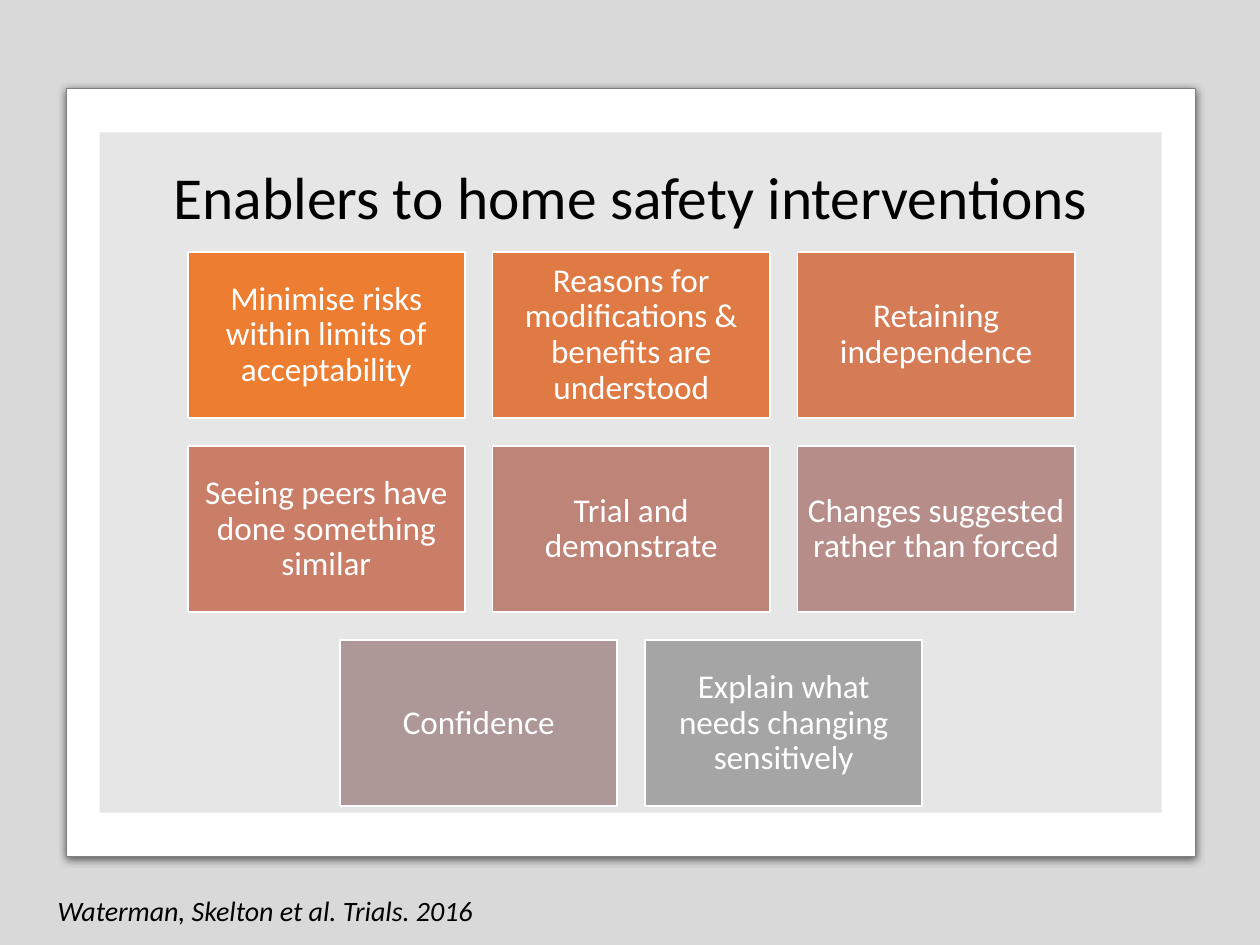
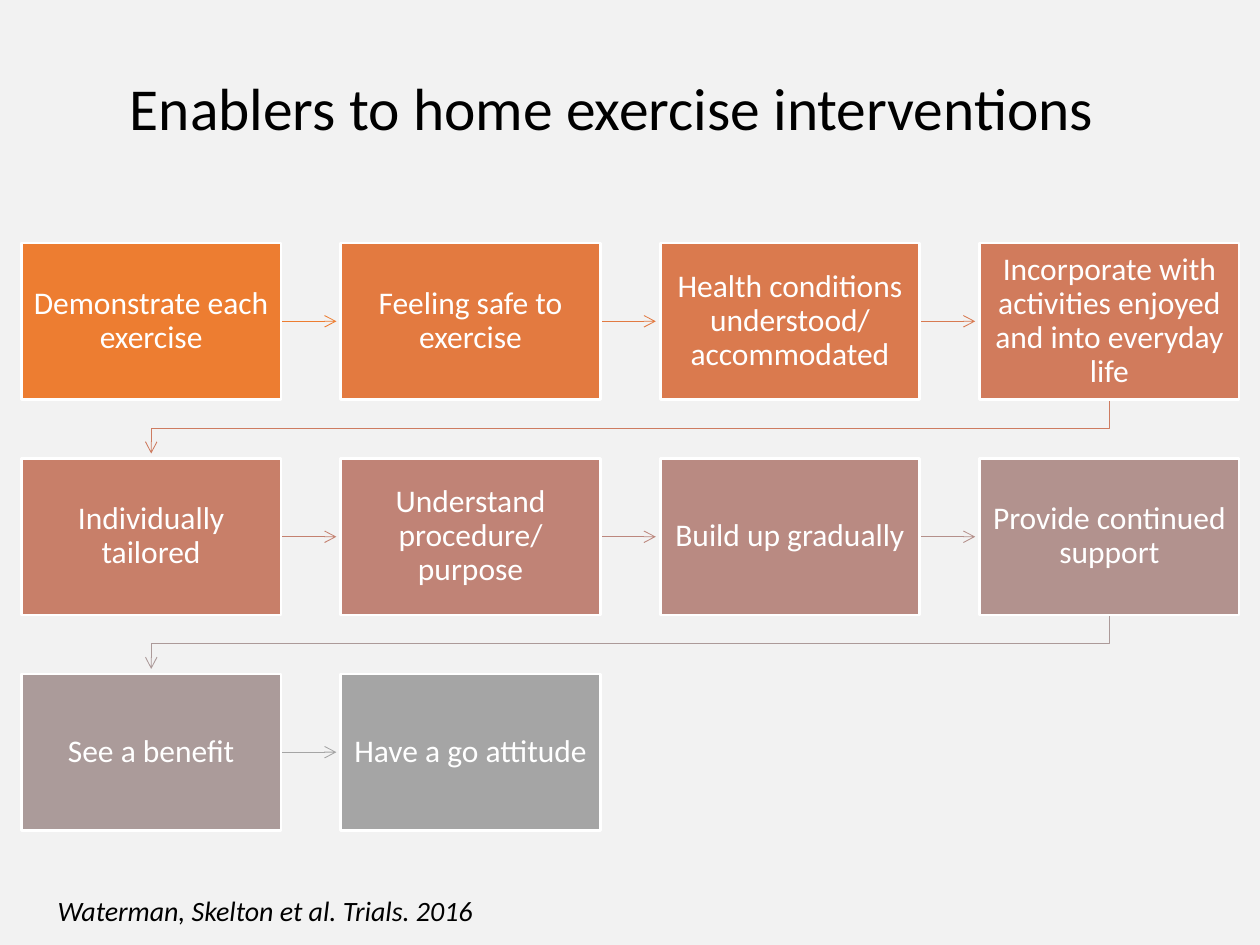
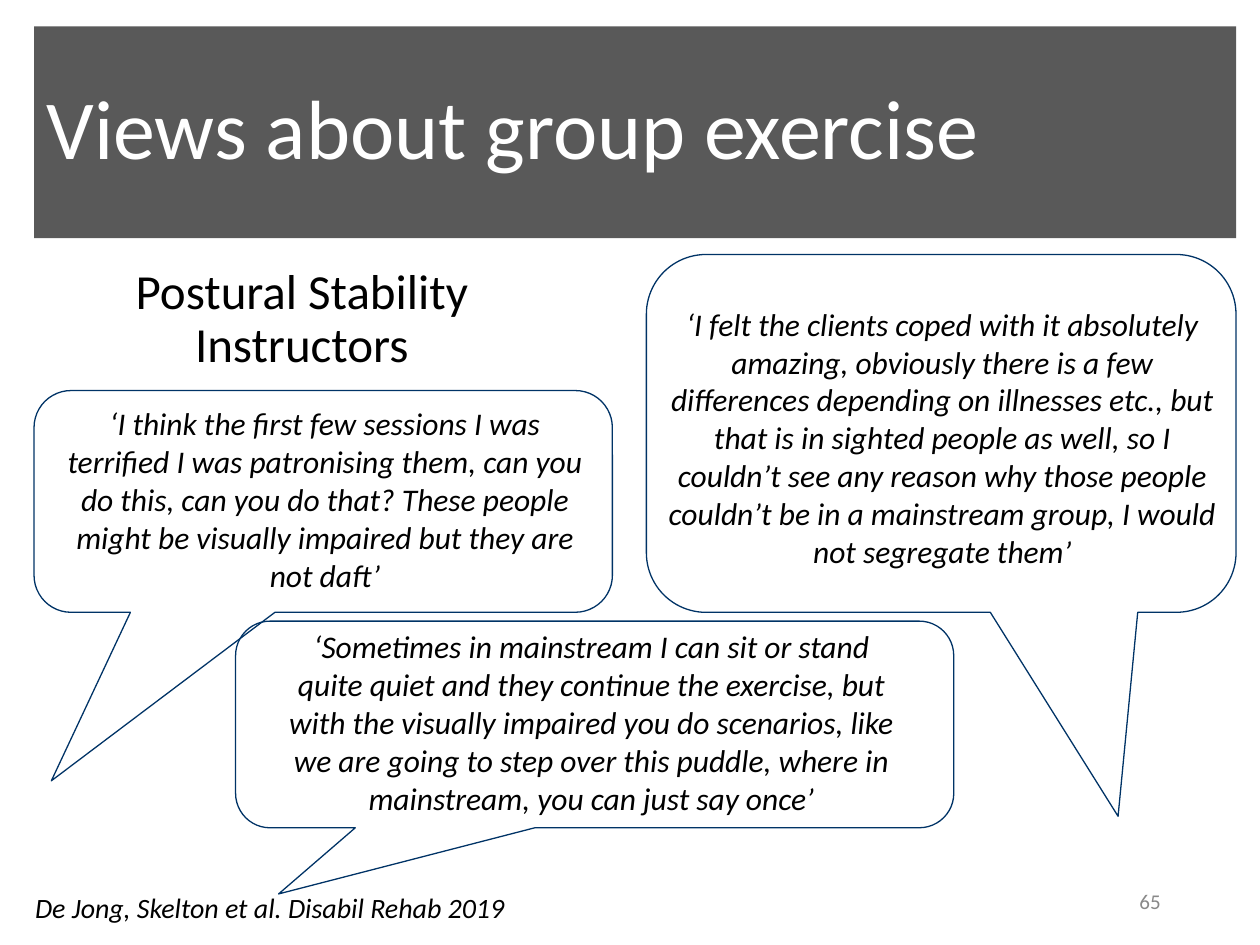
from lxml import etree
from pptx import Presentation
from pptx.dml.color import RGBColor
from pptx.enum.shapes import MSO_CONNECTOR, MSO_SHAPE
from pptx.enum.text import MSO_ANCHOR, PP_ALIGN
from pptx.oxml.ns import qn
from pptx.util import Inches, Pt

RECT, CALLOUT = MSO_SHAPE.RECTANGLE, MSO_SHAPE.ROUNDED_RECTANGULAR_CALLOUT
STRAIGHT = MSO_CONNECTOR.STRAIGHT
LEFT, CENTER, RIGHT = PP_ALIGN.LEFT, PP_ALIGN.CENTER, PP_ALIGN.RIGHT
TOP, MIDDLE = MSO_ANCHOR.TOP, MSO_ANCHOR.MIDDLE

FONT = "Calibri"
COLORS = {
    "text": "000000", "white": "FFFFFF", "overlay": "000000",
    "frame line": "808080", "panel": "E7E6E6", "pale": "F2F2F2",
    "band": "595959", "callout line": "003366", "number": "898989",
}

# Tile texts with their fills, and the colour of the arrow that leaves each tile
SAFETY_ENABLERS = [
    ("Minimise risks within limits of acceptability", "ED7D31"),
    ("Reasons for modifications & benefits are understood", "E07A44"),
    ("Retaining independence", "D57B56"),
    ("Seeing peers have done something similar", "CA7E67"),
    ("Trial and demonstrate", "BF8478"),
    ("Changes suggested rather than forced", "B68D88"),
    ("Confidence", "AD9897"),
    ("Explain what needs changing sensitively", "A5A5A5"),
]
EXERCISE_ENABLERS = [
    ("Demonstrate each exercise", "ED7D31", "ED7D31"),
    ("Feeling safe to exercise", "E37A40", "E27A42"),
    ("Health conditions understood/ accommodated", "DA7A4E", "D87A51"),
    ("Incorporate with activities enjoyed and into everyday life", "D17B5C", "CE7C61"),
    ("Individually tailored", "C87F69", "C48170"),
    ("Understand procedure/ purpose", "C08376", "BC877E"),
    ("Build up gradually", "B98A82", "B4908B"),
    ("Provide continued support", "B2928E", "AC9A99"),
    ("See a benefit", "AB9B9A", "A5A5A5"),
    ("Have a go attitude", "A5A5A5", None),
]
# Callout box, tail tip, then text box and quote
QUOTES = [
    ((0.27, 3.1, 4.59, 1.76), (-0.47, 1.26), (0.37, 3.16, 4.42, 1.62),
     "‘I think the first few sessions I was terrified I was patronising them, can you do "
     "this, can you do that? These people might be visually impaired but they are not daft’"),
    ((5.13, 2.02, 4.68, 2.84), (0.3, 1.07), (5.2, 2.37, 4.56, 2.22),
     "‘I felt the clients coped with it absolutely amazing, obviously there is a few "
     "differences depending on illnesses etc., but that is in sighted people as well, so I "
     "couldn’t see any reason why those people couldn’t be in a mainstream group, I would "
     "not segregate them’"),
    ((1.87, 4.93, 5.7, 1.64), (-0.44, 0.82), (2.14, 4.93, 5.11, 1.62),
     "‘Sometimes in mainstream I can sit or stand quite quiet and they continue the "
     "exercise, but with the visually impaired you do scenarios, like we are going to step "
     "over this puddle, where in mainstream, you can just say once’"),
]
# Title, box, size, colour, alignment, then source line and its box
SLIDES = [
    ("Enablers to home safety interventions", (1.05, 1.18, 7.91, 0.82), 34, "text", CENTER,
     "Waterman, Skelton et al. Trials. 2016", (0.36, 7.04, 7.4, 0.37)),
    ("Enablers to home exercise interventions", (0.9, 0.37, 7.91, 1.02), 34, "text", CENTER,
     "Waterman, Skelton et al. Trials. 2016", (0.36, 7.04, 7.4, 0.37)),
    ("Views about group exercise", (0.27, 0.21, 9.54, 1.68), 48, "white", LEFT,
     "De Jong, Skelton et al. Disabil Rehab 2019", (0.18, 7.02, 5.51, 0.37)),
]


def put_shape(slide, kind, box, fill, line=None, width=1):
    shape = slide.shapes.add_shape(kind, *map(Inches, box))
    shape.shadow.inherit = False
    if fill:
        shape.fill.solid()
        shape.fill.fore_color.rgb = RGBColor.from_string(fill)
    else:
        shape.fill.background()
    if line:
        shape.line.color.rgb = RGBColor.from_string(line)
        shape.line.width = Pt(width)
    else:
        shape.line.fill.background()
    return shape


def write(shape, text, size, color="text", align=LEFT, anchor=TOP,
          italic=False, spacing=None, insets=(0.1, 0.05)):
    frame = shape.text_frame
    frame.word_wrap = True
    frame.vertical_anchor = anchor
    frame.margin_left = frame.margin_right = Inches(insets[0])
    frame.margin_top = frame.margin_bottom = Inches(insets[1])
    paragraph = frame.paragraphs[0]
    paragraph.alignment = align
    paragraph.line_spacing = spacing
    run = paragraph.add_run()
    run.text = text
    run.font.name, run.font.size, run.font.italic = FONT, Pt(size), italic
    run.font.color.rgb = RGBColor.from_string(COLORS[color])


prs = Presentation()
prs.slide_width, prs.slide_height = Inches(10), Inches(7.5)

# Titles and source lines
for title, title_box, size, color, align, source, source_box in SLIDES:
    slide = prs.slides.add_slide(prs.slide_layouts[5])
    heading = slide.shapes.title
    heading.left, heading.top, heading.width, heading.height = map(Inches, title_box)
    write(heading, title, size, color, align, MIDDLE, spacing=0.9)
    write(slide.shapes.add_textbox(*map(Inches, source_box)), source, 16, italic=True)
safety, exercise, views = prs.slides

# Home safety: tinted page, framed card and inner panel behind the title
overlay = put_shape(safety, RECT, (0, 0, 10, 7.5), COLORS["overlay"])
tint = overlay._element.spPr.find(qn("a:solidFill"))[0]
etree.SubElement(tint, qn("a:alpha"), val="15000")
card = put_shape(safety, RECT, (0.53, 0.7, 8.96, 6.1), COLORS["white"],
                 COLORS["frame line"], 0.75)
shadow = etree.SubElement(card._element.spPr.find(qn("a:effectLst")), qn("a:outerShdw"),
                          blurRad=str(Pt(4.5)), dist=str(Pt(1.5)), dir="5400000",
                          algn="t", rotWithShape="0")
shadow_color = etree.SubElement(shadow, qn("a:srgbClr"), val="000000")
etree.SubElement(shadow_color, qn("a:alpha"), val="63000")
panel = put_shape(safety, RECT, (0.79, 1.05, 8.43, 5.4), COLORS["panel"])
for layer, backdrop in enumerate((overlay, card, panel)):
    safety.shapes._spTree.insert(2 + layer, backdrop._element)

# Home safety: three tiles a row, the short last row centred
for i, (enabler, fill) in enumerate(SAFETY_ENABLERS):
    row, column = divmod(i, 3)
    tiles_in_row = min(3, len(SAFETY_ENABLERS) - 3 * row)
    left = 1.49 + 2.42 * (column + (3 - tiles_in_row) / 2)
    tile = put_shape(safety, RECT, (left, 2 + 1.54 * row, 2.2, 1.32), fill, COLORS["white"])
    write(tile, enabler, 19, "white", CENTER, MIDDLE, spacing=0.9, insets=(0.08, 0.08))

# Home exercise: four tiles a row, each leading to the next
exercise.background.fill.solid()
exercise.background.fill.fore_color.rgb = RGBColor.from_string(COLORS["pale"])
TILE_W, TILE_H, STEP_X, STEP_Y = 2.06, 1.24, 2.535, 1.71
for i, (enabler, fill, arrow_color) in enumerate(EXERCISE_ENABLERS):
    row, column = divmod(i, 4)
    left, top = 0.17 + STEP_X * column, 1.93 + STEP_Y * row
    if arrow_color:
        if column < 3:
            start, middle = left + TILE_W, top + TILE_H / 2
            arrow = exercise.shapes.add_connector(
                STRAIGHT, *map(Inches, (start, middle, start + 0.44, middle)))
        else:
            start, end, bottom = left + TILE_W / 2, 0.17 + TILE_W / 2, top + TILE_H
            bend = [(end, bottom + 0.23), (start, bottom + 0.23)]
            outline = exercise.shapes.build_freeform(Inches(start), Inches(bottom))
            outline.add_line_segments(
                [(Inches(x), Inches(y)) for x, y in bend[::-1] + [(end, bottom + 0.43)]],
                close=False)
            arrow = outline.convert_to_shape()
            arrow.fill.background()
        arrow.line.color.rgb = RGBColor.from_string(arrow_color)
        arrow.line.width = Pt(0.5)
        arrow_props = arrow._element.spPr
        etree.SubElement(arrow_props.find(qn("a:ln")), qn("a:tailEnd"), type="arrow")
        etree.SubElement(arrow_props, qn("a:effectLst"))
    tile = put_shape(exercise, RECT, (left, top, TILE_W, TILE_H), fill, COLORS["white"], 1.5)
    write(tile, enabler, 18, "white", CENTER, MIDDLE, spacing=0.9, insets=(0.1, 0.11))

# Group exercise: title band, subheading and page number
views.shapes.title.fill.solid()
views.shapes.title.fill.fore_color.rgb = RGBColor.from_string(COLORS["band"])
subheading = views.shapes.add_textbox(*map(Inches, (0.27, 2.07, 4.25, 4.76)))
write(subheading, "Postural Stability Instructors", 28, align=CENTER, spacing=0.9)
page_number = views.shapes.add_textbox(*map(Inches, (7.06, 6.95, 2.25, 0.4)))
write(page_number, "65", 12, "number", RIGHT, MIDDLE)

# Group exercise: quotes in callouts
for callout_box, tip, quote_box, quote in QUOTES:
    callout = put_shape(views, CALLOUT, callout_box, None, COLORS["callout line"], 0.75)
    callout.adjustments[0], callout.adjustments[1] = tip
    write(views.shapes.add_textbox(*map(Inches, quote_box)), quote, 18,
          align=CENTER, italic=True)

prs.save("out.pptx")
